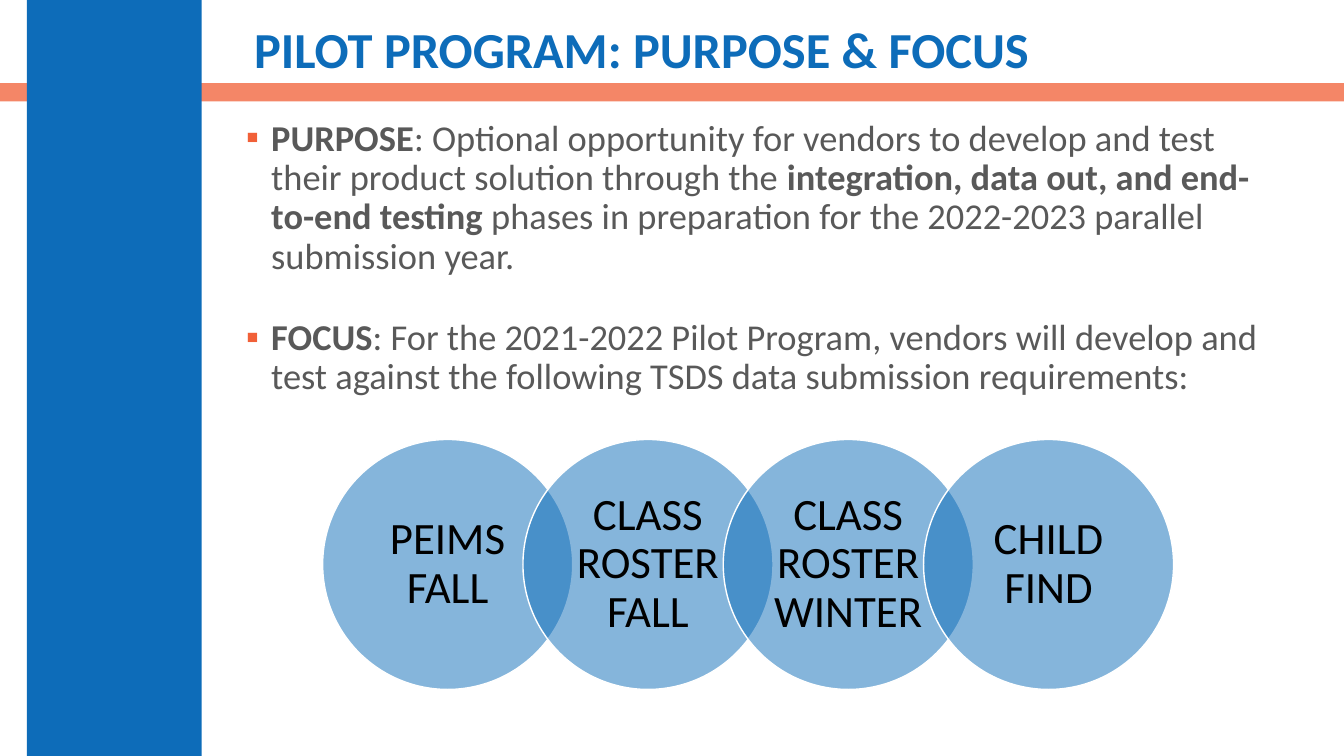
import dataclasses
import pptx
import pptx.dml.color
import pptx.enum.shapes
import pptx.enum.text
import pptx.oxml
import pptx.oxml.ns
import pptx.util
from lxml import etree

Inch = pptx.util.Inches
Pt = pptx.util.Pt
Align = pptx.enum.text.PP_ALIGN
Anchor = pptx.enum.text.MSO_ANCHOR
Kind = pptx.enum.shapes.MSO_SHAPE
qn = pptx.oxml.ns.qn
WIDE, HIGH = 13.33, 7.5


@dataclasses.dataclass
class Theme:
    face: str = "Calibri"
    blue: str = "0D6CB9"
    coral: str = "F16038"
    gray: str = "595959"
    black: str = "000000"
    white: str = "FFFFFF"
    head: int = 36
    body: int = 26
    label: int = 32


theme = Theme()


def rgb(code):
    return pptx.dml.color.RGBColor.from_string(code)


def place(shape, box):
    shape.left, shape.top, shape.width, shape.height = map(Inch, box)


def add_run(para, text, size, color, bold=False):
    run = para.add_run()
    run.text = text
    font = run.font
    font.name, font.size, font.bold = theme.face, Pt(size), bold
    font.color.rgb = rgb(color)


def add_form(slide, kind, box, color, alpha=100):
    form = slide.shapes.add_shape(kind, *map(Inch, box))
    form.shadow.inherit = False
    form.fill.solid()
    form.fill.fore_color.rgb = rgb(color)
    form.line.fill.background()
    if alpha < 100:
        tint = form.fill._xPr.find(qn("a:solidFill"))[0]
        etree.SubElement(tint, qn("a:alpha")).set("val", str(alpha * 1000))
    return form


def add_frame(slide, box):
    left, top, width, height = box
    stripe = (left, top + height * 0.11, width, 0.18)
    band = (left + width * 0.02, top, width * 0.13, height)
    add_form(slide, Kind.RECTANGLE, stripe, theme.coral, 76)
    add_form(slide, Kind.RECTANGLE, band, theme.blue)


def add_title(slide, box, text):
    title = slide.shapes.title
    place(title, box)
    frame = title.text_frame
    frame.auto_size = pptx.enum.text.MSO_AUTO_SIZE.NONE
    frame.vertical_anchor = Anchor.MIDDLE
    para = frame.paragraphs[0]
    para.alignment = Align.LEFT
    para.line_spacing = 0.9
    add_run(para, text, theme.head, theme.blue, True)


def set_bullet(para):
    props = para._p.get_or_add_pPr()
    props.set("marL", str(Inch(0.25)))
    props.set("indent", str(-Inch(0.25)))
    tint = etree.SubElement(props, qn("a:buClr"))
    etree.SubElement(tint, qn("a:srgbClr")).set("val", theme.coral)
    etree.SubElement(props, qn("a:buFont")).set("typeface", theme.face)
    etree.SubElement(props, qn("a:buChar")).set("char", "▪")


def add_list(slide, box, items):
    body = slide.placeholders[1]
    place(body, box)
    frame = body.text_frame
    frame.auto_size = pptx.enum.text.MSO_AUTO_SIZE.NONE
    for index, parts in enumerate(items):
        para = frame.add_paragraph() if index else frame.paragraphs[0]
        set_bullet(para)
        para.line_spacing = 0.9
        para.space_before = Pt(30 if index else 0)
        for text, bold in parts:
            add_run(para, text, theme.body, theme.gray, bold)


def add_rings(slide, box, names):
    left, top, width, size = box
    step = (width - size) / (len(names) - 1)
    for index, name in enumerate(names):
        spot = (left + index * step, top, size, size)
        ring = add_form(slide, Kind.OVAL, spot, theme.blue, 50)
        ring.line.color.rgb = rgb(theme.white)
        ring.line.width = Pt(1)
        frame = ring.text_frame
        frame.word_wrap = True
        frame.vertical_anchor = Anchor.MIDDLE
        frame.margin_left = frame.margin_right = Inch(0.14)
        frame.margin_top = frame.margin_bottom = Inch(0.04)
        para = frame.paragraphs[0]
        para.alignment = Align.CENTER
        para.line_spacing = 0.9
        add_run(para, name, theme.label, theme.black)


def main():
    deck = pptx.Presentation()
    deck.slide_width, deck.slide_height = Inch(WIDE), Inch(HIGH)
    slide = deck.slides.add_slide(deck.slide_layouts[1])
    add_frame(slide, (0, 0, WIDE, HIGH))
    add_title(slide, (2.42, 0.22, 10.41, 0.59), "PILOT PROGRAM: PURPOSE & FOCUS")
    add_list(slide, (2.34, 1.14, 10.38, 6.31), [
        [
            ("PURPOSE", True),
            (": Optional opportunity for vendors to develop and test "
             "their product solution through the ", False),
            ("integration, data out, and end-to-end testing ", True),
            ("phases in preparation for the 2022-2023 parallel "
             "submission year.", False),
        ],
        [
            ("FOCUS", True),
            (": For the 2021-2022 Pilot Program, vendors will develop and "
             "test against the following TSDS data submission "
             "requirements:", False),
        ],
    ])
    add_rings(slide, (3.2, 4.36, 8.44, 2.48), [
        "PEIMS FALL", "CLASS ROSTER FALL", "CLASS ROSTER WINTER", "CHILD FIND",
    ])
    deck.save("out.pptx")


if __name__ == "__main__":
    main()
